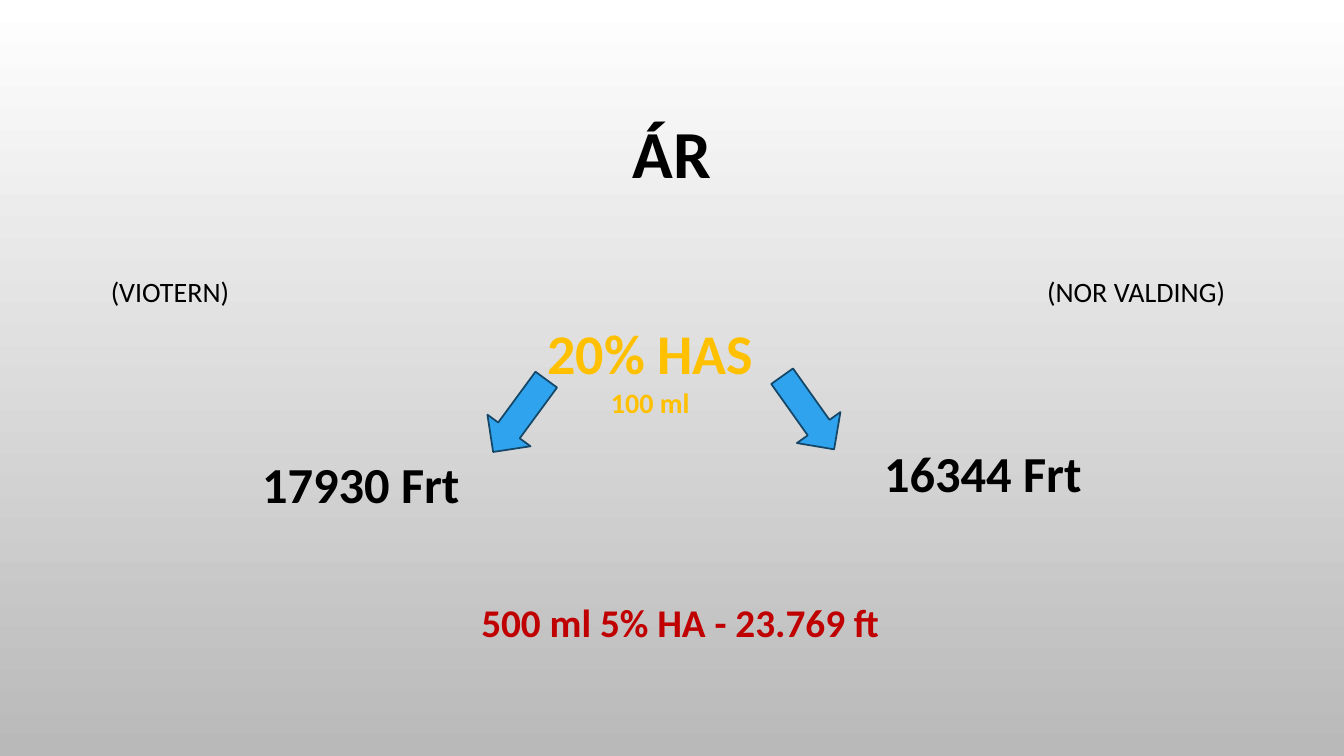
from dataclasses import dataclass

from pptx import Presentation
from pptx.dml.color import RGBColor
from pptx.enum.shapes import MSO_SHAPE
from pptx.enum.text import MSO_ANCHOR, PP_ALIGN
from pptx.util import Inches, Pt


@dataclass(frozen=True)
class Theme:
    font: str = "Calibri"
    black: str = "000000"
    gold: str = "FFC000"
    red: str = "C00000"
    arrow: str = "2FA3EE"
    outline: str = "154768"
    top: str = "FFFFFF"
    bottom: str = "B9B9B9"
    title: int = 48
    product: int = 40
    price: int = 36
    total: int = 28
    label: int = 20


theme = Theme()
color = RGBColor.from_string


def format_paragraph(paragraph, size, ink, bold, align):
    paragraph.alignment = align
    for span in paragraph.runs:
        span.font.name = theme.font
        span.font.size = Pt(size)
        span.font.bold = bold
        span.font.color.rgb = color(ink)


deck = Presentation()
deck.slide_width, deck.slide_height = Inches(13.33), Inches(7.5)
page = deck.slides.add_slide(deck.slide_layouts[5])

# Background, white at the top to grey at the bottom
backdrop = page.background.fill
backdrop.gradient()
backdrop.gradient_angle = 270
for stop, position, shade in zip(backdrop.gradient_stops, (0, 1), (theme.top, theme.bottom)):
    stop.position = position
    stop.color.rgb = color(shade)

# Title
title = page.shapes.title
title.left, title.top = Inches(1), Inches(0.68)
title.width, title.height = Inches(11.33), Inches(1.75)
title.text_frame.text = "ÁR"
title.text_frame.vertical_anchor = MSO_ANCHOR.MIDDLE
title.text_frame.paragraphs[0].line_spacing = 0.9
format_paragraph(title.text_frame.paragraphs[0], theme.title, theme.black, True, PP_ALIGN.CENTER)

# Makers, prices, product and total: left, middle, width, height, align, lines
texts = [
    (1, 2.89, 5.58, 0.5, PP_ALIGN.LEFT, [("(VIOTERN)", theme.label, theme.black, False)]),
    (6.67, 2.89, 5.58, 0.5, PP_ALIGN.RIGHT, [("(NOR VALDING)", theme.label, theme.black, False)]),
    (2.33, 4.79, 2.5, 0.75, PP_ALIGN.CENTER, [("17930 Frt", theme.price, theme.black, True)]),
    (8.5, 4.69, 2.5, 0.75, PP_ALIGN.CENTER, [("16344 Frt", theme.price, theme.black, True)]),
    (5.2, 3.66, 2.5, 1.12, PP_ALIGN.CENTER, [("20% HAS", theme.product, theme.gold, True),
                                            ("100 ml", theme.label, theme.gold, True)]),
    (4.51, 6.17, 4.47, 0.57, PP_ALIGN.CENTER, [("500 ml 5% HA - 23.769 ft", theme.total, theme.red, True)]),
]
for left, middle, width, height, align, lines in texts:
    box = page.shapes.add_textbox(Inches(left), Inches(middle - height / 2), Inches(width), Inches(height))
    frame = box.text_frame
    frame.word_wrap = True
    frame.vertical_anchor = MSO_ANCHOR.MIDDLE
    frame.text = "\n".join(line[0] for line in lines)
    for paragraph, (_, size, ink, bold) in zip(frame.paragraphs, lines):
        format_paragraph(paragraph, size, ink, bold, align)

# Arrows from the product to the two prices
for left, top, turn in ((4.89, 3.68, 36.3), (7.75, 3.65, 324.6)):
    arrow = page.shapes.add_shape(MSO_SHAPE.DOWN_ARROW, Inches(left), Inches(top), Inches(0.53), Inches(0.89))
    arrow.rotation = turn
    arrow.shadow.inherit = False
    arrow.fill.solid()
    arrow.fill.fore_color.rgb = color(theme.arrow)
    arrow.line.color.rgb = color(theme.outline)
    arrow.line.width = Pt(1.25)

deck.save("out.pptx")
